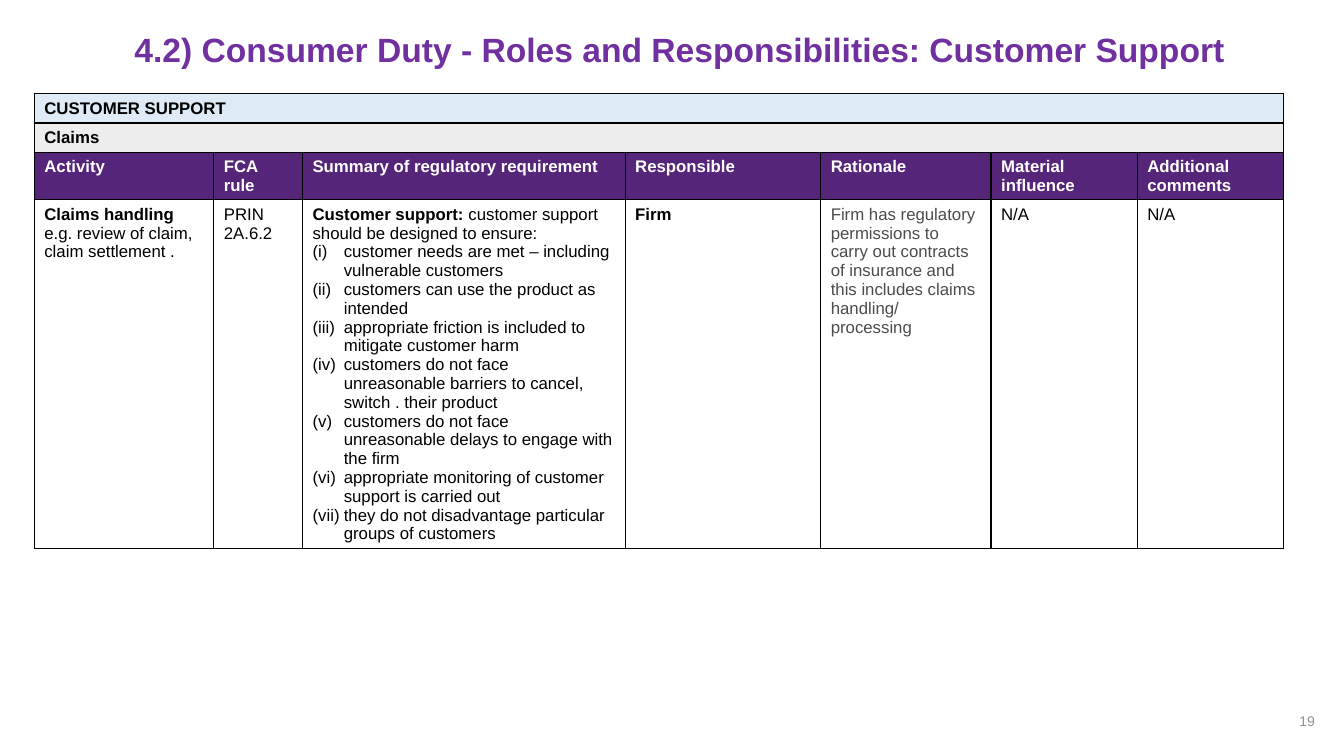
from pptx import Presentation
from pptx.dml.color import RGBColor
from pptx.enum.text import MSO_ANCHOR, PP_ALIGN
from pptx.oxml.ns import qn
from pptx.util import Inches, Pt
from lxml.etree import SubElement

# Content
TITLE = "\u00a04.2)\u00a0Consumer Duty - Roles and Responsibilities: Customer Support"
PAGE_NUMBER = "19"
BANDS = [("CUSTOMER SUPPORT", "DEEBF7"), ("Claims", "EDEDED")]
HEADERS = ["Activity", "FCA\nrule", "Summary of regulatory requirement", "Responsible",
           "Rationale", "Material influence", "Additional comments"]
OUTCOMES = [
    "customer needs are met – including vulnerable customers",
    "customers can use the product as intended",
    "appropriate friction is included to mitigate customer harm",
    "customers do not face unreasonable barriers to cancel, switch . their product",
    "customers do not face unreasonable delays to engage with the firm",
    "appropriate monitoring of customer support is carried out",
    "they do not disadvantage particular groups of customers",
]
# Each cell: (bold text, regular text, colour)
DETAILS = [
    ("Claims handling ", "e.g. review of claim, claim settlement .", "000000"),
    ("", "PRIN 2A.6.2", "000000"),
    ("Customer support: ", "customer support should be designed to ensure:", "000000"),
    ("Firm", "", "000000"),
    ("", "Firm has regulatory permissions to carry out contracts of insurance "
         "and this includes claims handling/ processing", "4D4B4C"),
    ("", "N/A", "000000"),
    ("", "N/A", "000000"),
]
SUMMARY_COL = 2
COL_WIDTHS = [1.78, 0.88, 3.2, 1.94, 1.69, 1.45, 1.45]
ROW_HEIGHTS = [0.29, 0.29, 0.47, 3.46]


def color(value):
    return RGBColor.from_string(value)


def add_run(p, text, size=12, fill="000000", bold=False):
    r = p.add_run()
    r.text = text
    r.font.name, r.font.size, r.font.bold = "Arial", Pt(size), bold
    r.font.color.rgb = color(fill)


def style_cell(cell, fill):
    cell.fill.solid()
    cell.fill.fore_color.rgb = color(fill)
    props = cell._tc.get_or_add_tcPr()
    for i, side in enumerate(("a:lnL", "a:lnR", "a:lnT", "a:lnB")):
        line = props.makeelement(qn(side), {"w": str(Pt(1))})
        solid = SubElement(line, qn("a:solidFill"))
        SubElement(solid, qn("a:srgbClr"), val="000000")
        props.insert(i, line)


def number_paragraph(p):
    props = p._p.get_or_add_pPr()
    props.set("marL", str(Inches(0.31)))
    props.set("indent", str(-Inches(0.31)))
    SubElement(props, qn("a:buFont"), typeface="+mj-lt")
    SubElement(props, qn("a:buAutoNum"), type="romanLcParenBoth")


def set_frame(tf):
    tf.word_wrap = True
    tf.vertical_anchor = MSO_ANCHOR.MIDDLE
    tf.margin_left = tf.margin_right = Inches(0.12)
    tf.margin_top = tf.margin_bottom = Inches(0.06)


prs = Presentation()
prs.slide_width, prs.slide_height = Inches(13.33), Inches(7.5)
slide = prs.slides.add_slide(prs.slide_layouts[5])

# Title
title = slide.shapes.title
title.left, title.top = Inches(1.12), Inches(0.28)
title.width, title.height = Inches(11.76), Inches(0.46)
set_frame(title.text_frame)
p = title.text_frame.paragraphs[0]
p.alignment, p.line_spacing = PP_ALIGN.LEFT, 0.9
add_run(p, TITLE, 24, "7030A0", True)

# Responsibilities table
table = slide.shapes.add_table(
    len(ROW_HEIGHTS), len(COL_WIDTHS), Inches(0.34), Inches(0.93),
    Inches(sum(COL_WIDTHS)), Inches(sum(ROW_HEIGHTS))).table
for col, width in zip(table.columns, COL_WIDTHS):
    col.width = Inches(width)
for row, height in zip(table.rows, ROW_HEIGHTS):
    row.height = Inches(height)

row_fills = [fill for _, fill in BANDS] + ["552579", "FFFFFF"]
for row, fill in zip(table.rows, row_fills):
    for cell in row.cells:
        style_cell(cell, fill)

# Full-width band rows
last_col = len(COL_WIDTHS) - 1
for i, (label, _) in enumerate(BANDS):
    table.cell(i, 0).merge(table.cell(i, last_col))
    add_run(table.cell(i, 0).text_frame.paragraphs[0], label, bold=True)

# Header and detail rows
header_row = len(BANDS)
for j, (header, (strong, regular, fill)) in enumerate(zip(HEADERS, DETAILS)):
    tf = table.cell(header_row, j).text_frame
    for i, line in enumerate(header.split("\n")):
        p = tf.add_paragraph() if i else tf.paragraphs[0]
        add_run(p, line, fill="FFFFFF", bold=True)
    p = table.cell(header_row + 1, j).text_frame.paragraphs[0]
    for text, bold in ((strong, True), (regular, False)):
        if text:
            add_run(p, text, fill=fill, bold=bold)

# Numbered outcomes
summary = table.cell(header_row + 1, SUMMARY_COL).text_frame
for outcome in OUTCOMES:
    p = summary.add_paragraph()
    number_paragraph(p)
    add_run(p, outcome)

# Page number
box = slide.shapes.add_textbox(Inches(10.05), Inches(6.95), Inches(3.11), Inches(0.4))
set_frame(box.text_frame)
p = box.text_frame.paragraphs[0]
p.alignment = PP_ALIGN.RIGHT
add_run(p, PAGE_NUMBER, 10, "929292")

prs.save("out.pptx")
